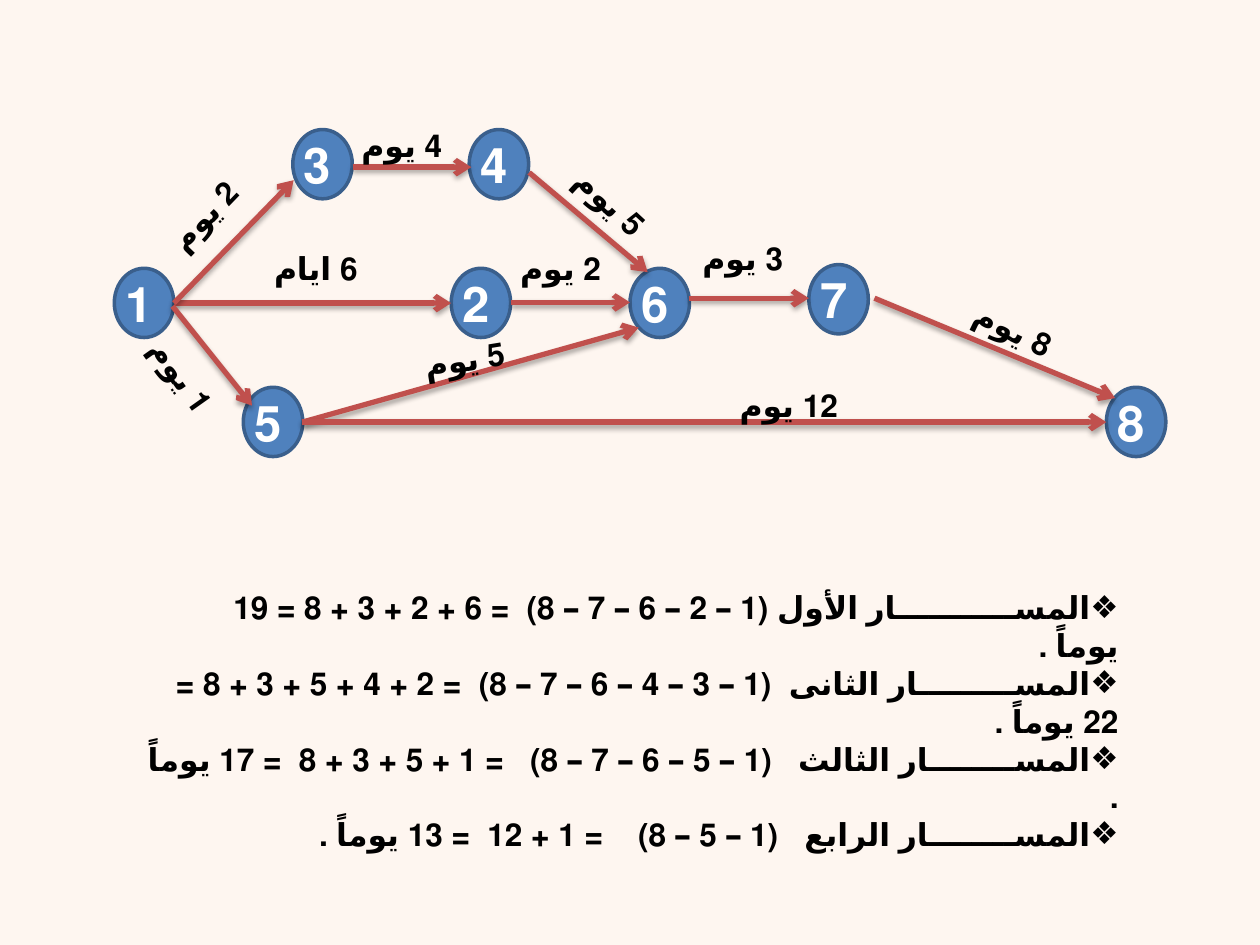
from lxml import etree
from pptx import Presentation
from pptx.dml.color import RGBColor
from pptx.enum.lang import MSO_LANGUAGE_ID
from pptx.enum.shapes import MSO_CONNECTOR, MSO_SHAPE
from pptx.enum.text import MSO_ANCHOR, MSO_AUTO_SIZE, PP_ALIGN
from pptx.oxml import parse_xml
from pptx.oxml.ns import nsdecls, qn
from pptx.util import Pt

ARABIC = MSO_LANGUAGE_ID.ARABIC
STRAIGHT = MSO_CONNECTOR.STRAIGHT
OVAL = MSO_SHAPE.OVAL
TOP, MIDDLE = MSO_ANCHOR.TOP, MSO_ANCHOR.MIDDLE
GROW = MSO_AUTO_SIZE.SHAPE_TO_FIT_TEXT
CENTER, RIGHT = PP_ALIGN.CENTER, PP_ALIGN.RIGHT

COLORS = {
    "background": "FEF6F0",
    "node": "4F81BD",
    "node_outline": "3A5F8C",
    "node_text": "FFFFFF",
    "arrow": "C0504D",
    "text": "000000",
}
FONT = {"name": "Calibri", "bold": True, "language_id": ARABIC}
GROWING_FRAME = {"word_wrap": True, "auto_size": GROW, "vertical_anchor": TOP}

NODE_WIDTH, NODE_HEIGHT = 34, 39.6
LABEL_WIDTH, LABEL_HEIGHT = 113, 29

# number, left, top
NODES = [
    ("1", 65.3, 153.3), ("2", 257.8, 153.3), ("3", 167.3, 74), ("4", 268.1, 74),
    ("5", 139, 221.3), ("6", 360, 153.3), ("7", 462.2, 151.2), ("8", 632.2, 221.3),
]

# start x, start y, end x, end y, label, label left, label top, label rotation
ACTIVITIES = [
    (99.4, 173.2, 257.8, 173.2, "6 ايام", 124, 139, 0),
    (99.4, 173.2, 167.8, 103, "2 يوم", 59.8, 108.7, 313.8),
    (98.6, 175, 144, 231.8, "1 يوم", 47.5, 200.2, 54.7),
    (292.3, 172.8, 360, 172.8, "2 يوم", 263.8, 139, 0),
    (201.6, 95.5, 269.3, 95.5, "4 يوم", 173.1, 68.4, 0),
    (302.4, 98.6, 370.1, 155.5, "5 يوم", 292.3, 100.8, 42.7),
    (172.8, 241.2, 365, 187.2, "5 يوم", 208.8, 190.8, 350.7),
    (172.8, 241.2, 632.2, 241.2, "12 يوم", 394.2, 217, 0),
    (393.8, 170.4, 462.2, 170.4, "3 يوم", 367.9, 133.2, 0),
    (499.7, 170.4, 637.2, 227.5, "8 يوم", 522.7, 173.5, 25.8),
]

# each piece of a path, with the extra width of the space that follows it
PATHS = [
    [("المســـــــــــار الأول", 0), ("(1 – 2 – 6 – 7 – 8)", 5),
     ("= 6 + 2 + 3 + 8 = 19 يوماً .", None)],
    [("المســـــــــار الثانى", 5), ("(1 – 3 – 4 – 6 – 7 – 8)", 5),
     ("= 2 + 4 + 5 + 3 + 8 = 22 يوماً .", None)],
    [("المســــــــار الثالث", 10), ("(1 – 5 – 6 – 7 – 8)", 10),
     ("= 1 + 5 + 3 + 8", 5), ("= 17 يوماً .", None)],
    [("المســــــــار الرابع", 10), ("(1 – 5 – 8)", 15),
     ("= 1 + 12", 5), ("= 13 يوماً .", None)],
]


def color(name):
    return RGBColor.from_string(COLORS[name])


def apply_format(target, values):
    for name, value in values.items():
        setattr(target, name, value)


def set_rtl(paragraph, alignment):
    paragraph.alignment = alignment
    paragraph._p.get_or_add_pPr().set("rtl", "1")


def add_run(paragraph, text, size, color_name):
    run = paragraph.add_run()
    run.text = text
    apply_format(run.font, {**FONT, "size": Pt(size)})
    run.font.color.rgb = color(color_name)
    return run


def add_node(slide, number, left, top):
    shape = slide.shapes.add_shape(OVAL, Pt(left), Pt(top), Pt(NODE_WIDTH), Pt(NODE_HEIGHT))
    shape.shadow.inherit = False
    shape.fill.solid()
    shape.fill.fore_color.rgb = color("node")
    shape.line.color.rgb = color("node_outline")
    shape.line.width = Pt(2)
    shape.text_frame.vertical_anchor = MIDDLE
    paragraph = shape.text_frame.paragraphs[0]
    set_rtl(paragraph, CENTER)
    add_run(paragraph, number, 28, "node_text")


def add_arrow(slide, *ends):
    connector = slide.shapes.add_connector(STRAIGHT, *map(Pt, ends))
    connector.line.color.rgb = color("arrow")
    connector.line.width = Pt(3)
    etree.SubElement(connector.line._get_or_add_ln(), qn("a:tailEnd"), type="arrow")
    connector._element.spPr.append(parse_xml(
        f'<a:effectLst {nsdecls("a")}>'
        f'<a:outerShdw blurRad="{Pt(3.1)}" dist="{Pt(1.8)}" dir="5400000" rotWithShape="0">'
        '<a:srgbClr val="000000"><a:alpha val="35000"/></a:srgbClr>'
        '</a:outerShdw></a:effectLst>'))


def add_label(slide, text, left, top, rotation):
    box = slide.shapes.add_textbox(Pt(left), Pt(top), Pt(LABEL_WIDTH), Pt(LABEL_HEIGHT))
    box.rotation = rotation
    apply_format(box.text_frame, GROWING_FRAME)
    paragraph = box.text_frame.paragraphs[0]
    set_rtl(paragraph, CENTER)
    add_run(paragraph, text, 18, "text")


def add_bullet(paragraph):
    properties = paragraph._p.get_or_add_pPr()
    properties.set("marL", "0")
    properties.set("indent", "0")
    etree.SubElement(properties, qn("a:buChar"), char="❖")


def add_path(paragraph, pieces):
    paragraph.space_before = Pt(0)
    add_bullet(paragraph)
    set_rtl(paragraph, RIGHT)
    for text, extra_width in pieces:
        add_run(paragraph, text, 18, "text")
        if extra_width is not None:
            space = add_run(paragraph, " ", 18, "text")
            space._r.get_or_add_rPr().set("spc", str(extra_width * 100))


def fill_path_list(placeholder):
    apply_format(placeholder, {
        "left": Pt(76.3), "top": Pt(332.6), "width": Pt(570), "height": Pt(94.5)})
    frame = placeholder.text_frame
    apply_format(frame, GROWING_FRAME)
    for index, pieces in enumerate(PATHS):
        paragraph = frame.add_paragraph() if index else frame.paragraphs[0]
        add_path(paragraph, pieces)


def main():
    presentation = Presentation()
    presentation.slide_width, presentation.slide_height = Pt(720), Pt(540)
    slide = presentation.slides.add_slide(presentation.slide_layouts[1])
    slide.background.fill.solid()
    slide.background.fill.fore_color.rgb = color("background")

    title = slide.shapes.title._element
    title.getparent().remove(title)
    for node in NODES:
        add_node(slide, *node)
    for activity in ACTIVITIES:
        add_arrow(slide, *activity[:4])
        add_label(slide, *activity[4:])
    fill_path_list(slide.placeholders[1])
    presentation.save("out.pptx")


if __name__ == "__main__":
    main()
